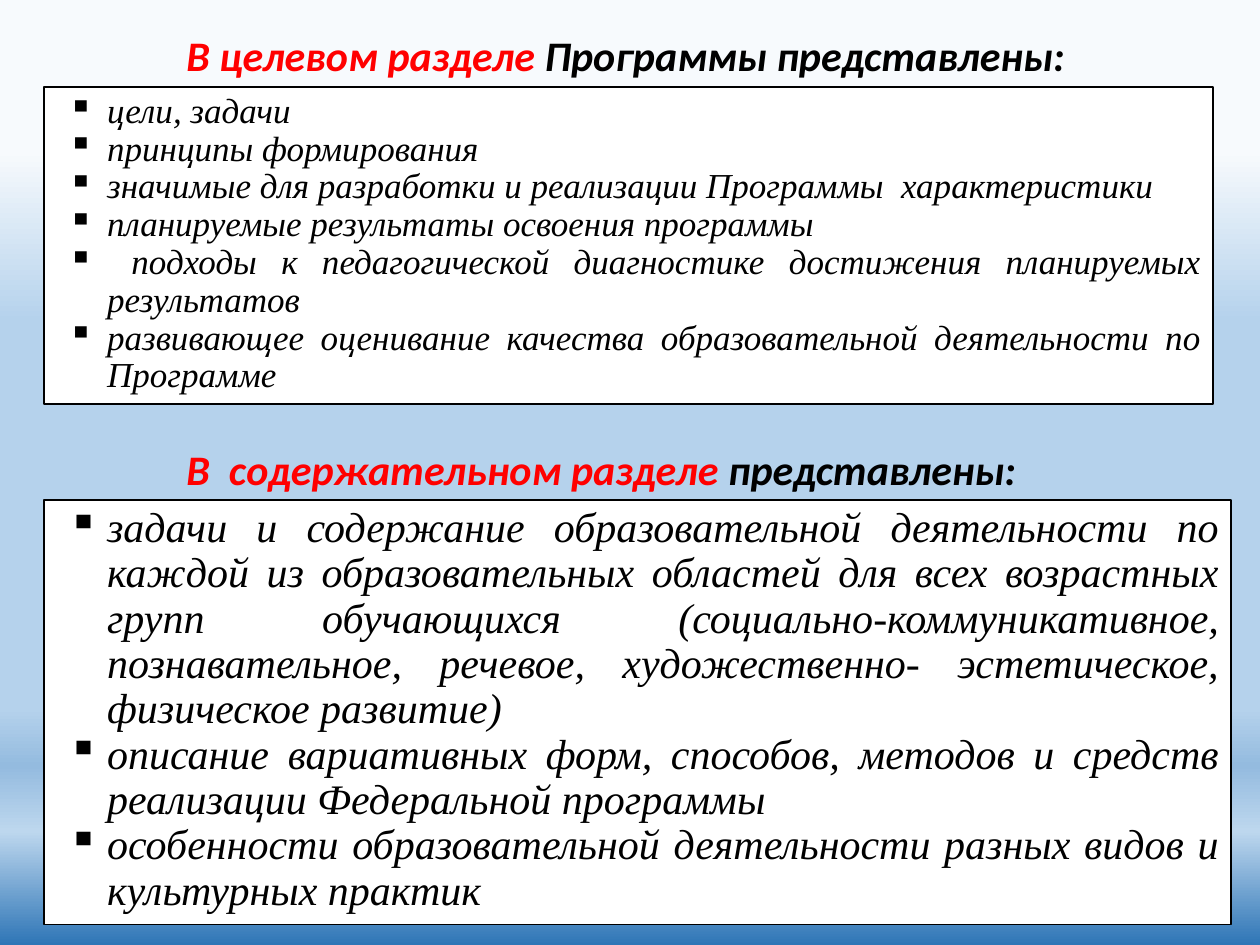
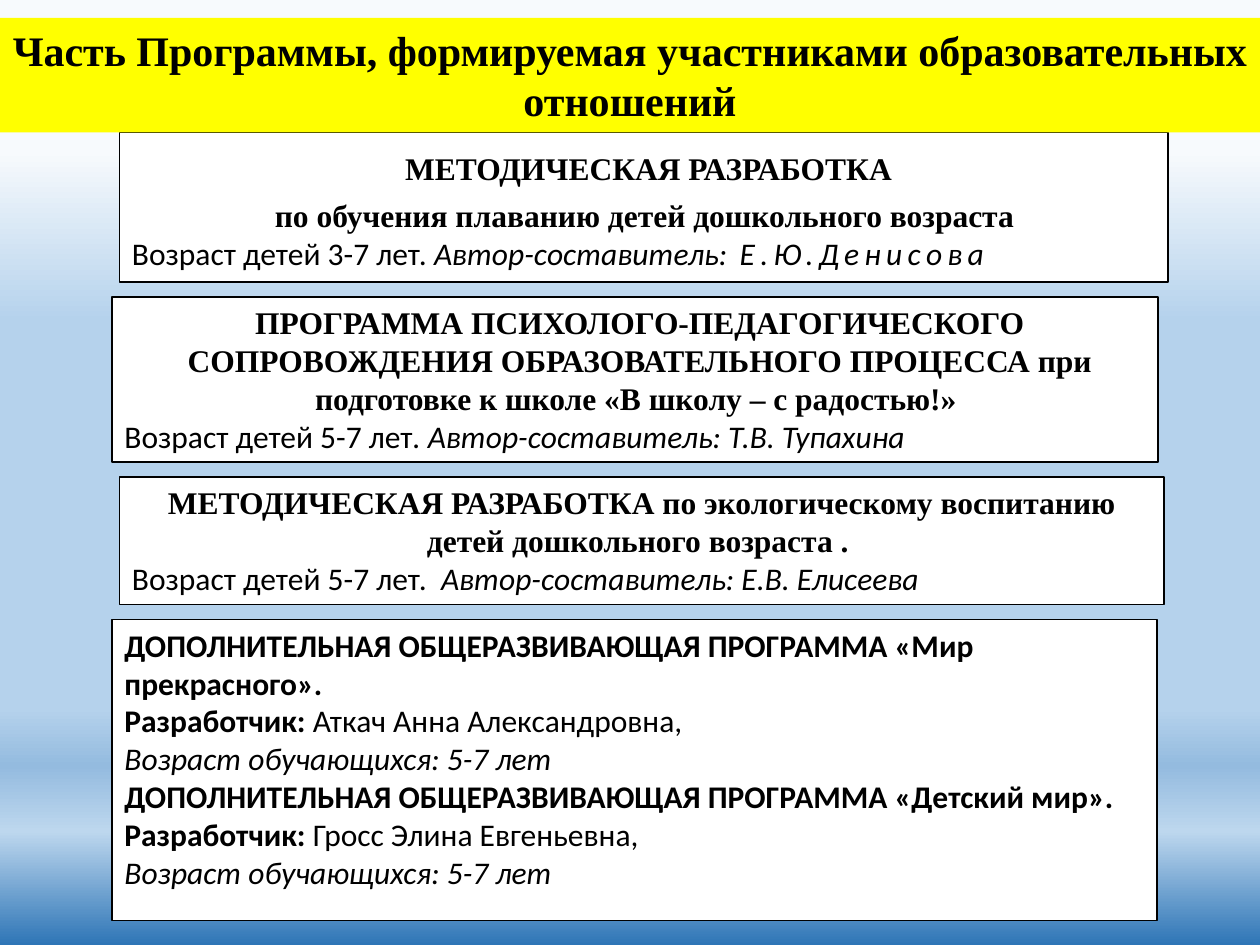
from dataclasses import dataclass

from lxml.etree import SubElement
from pptx import Presentation
from pptx.dml.color import RGBColor
from pptx.enum.shapes import MSO_SHAPE
from pptx.enum.text import MSO_ANCHOR, MSO_AUTO_SIZE, PP_ALIGN
from pptx.oxml.ns import qn
from pptx.util import Cm, Pt


@dataclass(frozen=True)
class Theme:
    black: str = "000000"
    white: str = "FFFFFF"
    accent: str = "FF0000"
    band: str = "FFFF00"
    sky: tuple = ((16, "F7FAFD"), (34, "B5D2EC"), (75, "B5D2EC"),
                  (81, "94BBDF"), (88, "BDD7EE"), (100, "2E75B6"))
    serif: str = "Times New Roman"
    sans: str = "Calibri"
    large: int = 24
    medium: int = 20
    small: int = 18


THEME = Theme()
SLIDE_WIDTH, SLIDE_HEIGHT = 25.4, 19.05
HEADING_HEIGHT = 1.27
CARD_GAP = 0.3
FIXED_LINE = Pt(13.6)


@dataclass
class Run:
    text: str
    size: int = THEME.small
    face: str = THEME.sans
    bold: bool = False
    italic: bool = False
    color: str = THEME.black
    spacing: int = 0


def add_sky_slide(presentation):
    """Add a blank slide with the shared vertical gradient."""
    slide = presentation.slides.add_slide(presentation.slide_layouts[6])
    slide.background.fill.gradient()
    gradient = next(slide.element.iter(qn("a:gradFill")))
    stops = gradient.find(qn("a:gsLst"))
    for stop in list(stops):
        stops.remove(stop)
    for position, color in THEME.sky:
        stop = SubElement(stops, qn("a:gs"), pos=str(position * 1000))
        SubElement(stop, qn("a:srgbClr"), val=color)
    gradient.find(qn("a:lin")).set("ang", "5400000")
    return slide


def add_box(slide, left, top, width, height, fill, outlined=True):
    shape = slide.shapes.add_shape(
        MSO_SHAPE.RECTANGLE, Cm(left), Cm(top), Cm(width), Cm(height))
    shape.shadow.inherit = False
    shape.fill.solid()
    shape.fill.fore_color.rgb = RGBColor.from_string(fill)
    if outlined:
        shape.line.color.rgb = RGBColor.from_string(THEME.black)
        shape.line.width = Pt(1)
    else:
        shape.line.fill.background()
    frame = shape.text_frame
    frame.word_wrap = True
    frame.auto_size = MSO_AUTO_SIZE.NONE
    frame.vertical_anchor = MSO_ANCHOR.TOP
    return frame


def add_paragraph(frame, runs, align=PP_ALIGN.LEFT):
    """Fill the empty first paragraph, or add a new one."""
    first = frame.paragraphs[0]
    paragraph = frame.add_paragraph() if first.runs else first
    paragraph.alignment = align
    for item in runs:
        run = paragraph.add_run()
        run.text = item.text
        font = run.font
        font.name, font.size = item.face, Pt(item.size)
        font.bold, font.italic = item.bold, item.italic
        font.color.rgb = RGBColor.from_string(item.color)
        if item.spacing:
            run._r.get_or_add_rPr().set("spc", str(item.spacing * 100))
    return paragraph


def set_indent(paragraph, margin, hanging=0):
    properties = paragraph._p.get_or_add_pPr()
    properties.set("marL", str(Cm(margin)))
    properties.set("indent", str(-Cm(hanging)))
    return properties


def add_section(slide, top, width, height, heading_width, heading, items, size):
    """Add a two-colour heading with a bulleted panel below it."""
    panel = add_box(slide, 0.89, top, width, height, THEME.white)
    for item in items:
        paragraph = add_paragraph(
            panel, [Run(item, size, THEME.serif, italic=True)], PP_ALIGN.JUSTIFY)
        paragraph.line_spacing = 0.9
        properties = set_indent(paragraph, 1.02, 0.79)
        SubElement(properties, qn("a:buChar"), char="▪")

    frame = slide.shapes.add_textbox(
        Cm(3.51), Cm(top - HEADING_HEIGHT), Cm(heading_width), Cm(HEADING_HEIGHT)).text_frame
    frame.word_wrap = False
    frame.auto_size = MSO_AUTO_SIZE.SHAPE_TO_FIT_TEXT
    add_paragraph(frame, [
        Run(text, THEME.large, bold=True, italic=True, color=color)
        for text, color in zip(heading, (THEME.accent, THEME.black))])


def add_card_title(frame, text, margin=0.0):
    paragraph = add_paragraph(
        frame, [Run(text, face=THEME.serif, bold=True)], PP_ALIGN.CENTER)
    set_indent(paragraph, margin)
    return paragraph


def add_course(frame, title, developer):
    add_paragraph(frame, [Run(title, bold=True)])
    add_paragraph(frame, [Run("Разработчик: ", bold=True), Run(developer)])
    add_paragraph(frame, [Run("Возраст обучающихся: 5-7 лет", italic=True)])


def build_sections_slide(presentation):
    slide = add_sky_slide(presentation)
    add_section(
        slide, 1.75, 23.57, 6.4, 18.39,
        ("В целевом разделе ", "Программы представлены:"),
        ("цели, задачи",
         "принципы формирования",
         "значимые для разработки и реализации Программы  характеристики",
         "планируемые результаты освоения программы",
         " подходы к педагогической диагностике достижения планируемых результатов",
         "развивающее оценивание качества образовательной деятельности по Программе"),
        THEME.medium)
    add_section(
        slide, 10.08, 23.93, 8.56, 17.4,
        ("В  содержательном разделе ", "представлены:"),
        ("задачи и содержание образовательной деятельности по каждой из "
         "образовательных областей для всех возрастных групп обучающихся "
         "(социально-коммуникативное, познавательное, речевое, художественно- "
         "эстетическое, физическое развитие)",
         "описание вариативных форм, способов, методов и средств реализации "
         "Федеральной программы",
         "особенности образовательной деятельности разных видов и культурных практик"),
        THEME.large)


def build_programmes_slide(presentation):
    slide = add_sky_slide(presentation)
    band_top, band_height = 0.36, 2.31
    top = band_top + band_height
    cards = []
    for left, width, height in ((2.41, 21.13, 3.02), (2.26, 21.08, 3.33),
                                (2.41, 21.06, 2.57), (2.26, 21.06, 6.07)):
        cards.append(add_box(slide, left, top, width, height, THEME.white))
        top += height + CARD_GAP
    swimming, school, ecology, courses = cards

    band = add_box(slide, 0, band_top, SLIDE_WIDTH, band_height, THEME.band, outlined=False)
    add_paragraph(band, [Run(
        "Часть Программы, формируемая участниками образовательных отношений",
        THEME.large, THEME.serif, bold=True)], PP_ALIGN.CENTER)

    swimming.margin_top += FIXED_LINE
    title = add_card_title(swimming, "МЕТОДИЧЕСКАЯ РАЗРАБОТКА", 0.2)
    subtitle = add_card_title(
        swimming, "по обучения плаванию детей дошкольного возраста ", 0.2)
    title.line_spacing = subtitle.line_spacing = FIXED_LINE
    subtitle.space_before = FIXED_LINE
    add_paragraph(swimming, [
        Run("Возраст детей 3-7 лет. "),
        Run("Автор-составитель:", italic=True),
        Run(" Е.Ю.Денисова", italic=True, spacing=3)])

    add_card_title(
        school,
        "ПРОГРАММА ПСИХОЛОГО-ПЕДАГОГИЧЕСКОГО СОПРОВОЖДЕНИЯ ОБРАЗОВАТЕЛЬНОГО "
        "ПРОЦЕССА при подготовке к школе «В школу – с радостью!» ", 0.2)
    add_paragraph(school, [
        Run("Возраст детей 5-7 лет"),
        Run(". Автор-составитель: Т.В. Тупахина", italic=True)])

    add_card_title(
        ecology,
        "МЕТОДИЧЕСКАЯ РАЗРАБОТКА по экологическому воспитанию детей "
        "дошкольного возраста . ")
    add_paragraph(ecology, [
        Run("Возраст детей 5-7 лет.  "),
        Run("Автор-составитель: Е.В. Елисеева", italic=True)])

    for name, developer in (("Мир прекрасного", "Аткач Анна Александровна,"),
                            ("Детский мир", "Гросс Элина Евгеньевна,")):
        add_course(courses, f"ДОПОЛНИТЕЛЬНАЯ ОБЩЕРАЗВИВАЮЩАЯ ПРОГРАММА «{name}».", developer)


def main():
    presentation = Presentation()
    presentation.slide_width = Cm(SLIDE_WIDTH)
    presentation.slide_height = Cm(SLIDE_HEIGHT)
    build_sections_slide(presentation)
    build_programmes_slide(presentation)
    presentation.save("out.pptx")


if __name__ == "__main__":
    main()
